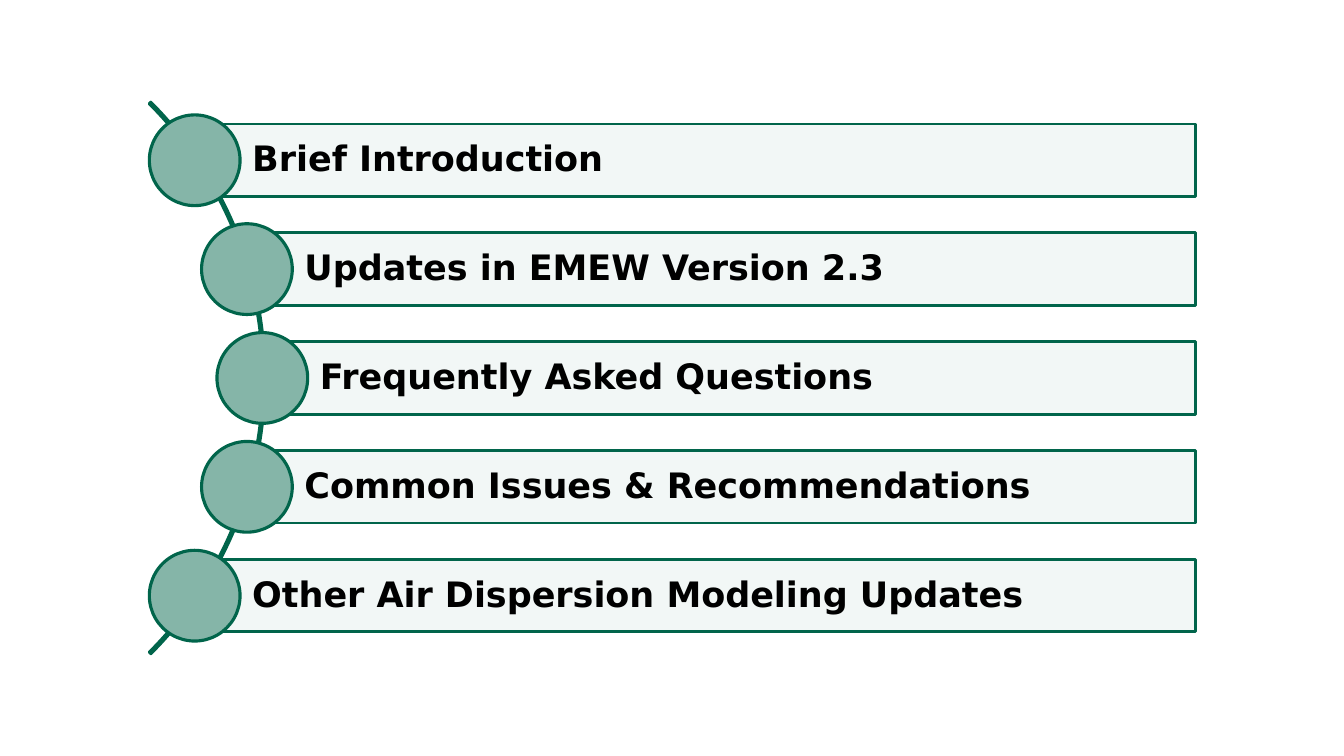
from lxml import etree
from pptx import Presentation
from pptx.dml.color import RGBColor
from pptx.enum import shapes, text
from pptx.oxml.ns import qn
from pptx.util import Pt

COLORS = {"green": "01654B", "bar": "E7F1EE", "dot": "85B5A8", "label": "000000"}
FONT = "DejaVu Sans"
AGENDA = [
    ("Brief Introduction", 139.1),
    ("Updates in EMEW Version 2.3", 176.4),
    ("Frequently Asked Questions", 187.4),
    ("Common Issues & Recommendations", 176.4),
    ("Other Air Dispersion Modeling Updates", 139.1),
]
WIDTH, HEIGHT = 960, 540
ROW_PITCH = 77.75
BAR_HEIGHT, BAR_RIGHT = 51.8, 854.1
DOT_SIZE = 64.8
ARC_SIZE, ARC_LEFT = 557.3, -367.9


def color(name):
    return RGBColor.from_string(COLORS[name])


def add_outlined(slide, kind, box, fill, line_width):
    shape = slide.shapes.add_shape(kind, *(Pt(length) for length in box))
    shape.shadow.inherit = False
    shape.fill.solid()
    shape.fill.fore_color.rgb = color(fill)
    shape.line.color.rgb = color("green")
    shape.line.width = Pt(line_width)
    return shape


def add_arc(slide):
    box = (ARC_LEFT, (HEIGHT - ARC_SIZE) / 2, ARC_SIZE, ARC_SIZE)
    arc = add_outlined(slide, shapes.MSO_SHAPE.BLOCK_ARC, box, "green", 2)
    for index, value in enumerate((189, 27, 0.003)):
        arc.adjustments[index] = value


def add_bar(slide, label, left, middle):
    box = (left, middle - BAR_HEIGHT / 2, BAR_RIGHT - left, BAR_HEIGHT)
    bar = add_outlined(slide, shapes.MSO_SHAPE.RECTANGLE, box, "bar", 2)
    tint = bar.fill._xPr.find(qn("a:solidFill"))[0]
    etree.SubElement(tint, qn("a:alpha"), val="50000")

    frame = bar.text_frame
    frame.text = label
    frame.word_wrap = True
    frame.vertical_anchor = text.MSO_ANCHOR.MIDDLE
    frame.margin_left = Pt(41.1)
    frame.margin_top = frame.margin_right = frame.margin_bottom = Pt(5)
    paragraph = frame.paragraphs[0]
    paragraph.alignment = text.PP_ALIGN.LEFT
    paragraph.line_spacing = 0.9
    font = paragraph.runs[0].font
    font.name = FONT
    font.size = Pt(25)
    font.bold = True
    font.color.rgb = color("label")


def add_dot(slide, center, middle):
    box = (center - DOT_SIZE / 2, middle - DOT_SIZE / 2, DOT_SIZE, DOT_SIZE)
    add_outlined(slide, shapes.MSO_SHAPE.OVAL, box, "dot", 2.25)


def main():
    deck = Presentation()
    deck.slide_width, deck.slide_height = Pt(WIDTH), Pt(HEIGHT)
    slide = deck.slides.add_slide(deck.slide_layouts[6])
    add_arc(slide)
    for row, (label, left) in enumerate(AGENDA):
        middle = HEIGHT / 2 + (row - (len(AGENDA) - 1) / 2) * ROW_PITCH
        add_bar(slide, label, left, middle)
        add_dot(slide, left, middle)
    deck.save("out.pptx")


if __name__ == "__main__":
    main()
